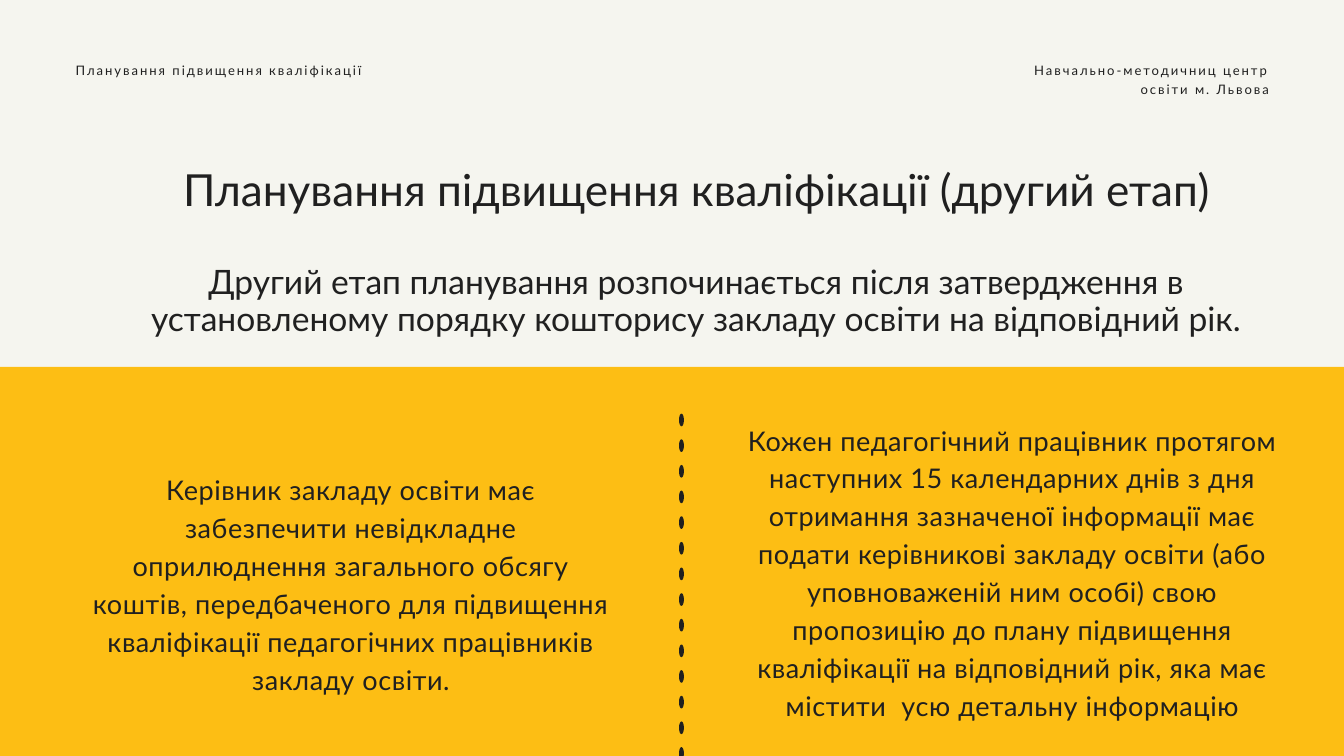
from math import cos, pi, sin

from pptx import Presentation
from pptx.dml.color import RGBColor
from pptx.enum.shapes import MSO_SHAPE as Shape
from pptx.enum.text import MSO_ANCHOR as Anchor, MSO_AUTO_SIZE as AutoSize, PP_ALIGN as Align
from pptx.util import Pt

EMU_PER_PX = 9525
WIDTH, HEIGHT = 1920, 1080
COLORS = {"paper": "F5F5EF", "yellow": "FDBE14", "ink": "202020"}


def px(length):
    return round(length * EMU_PER_PX)


def color(name):
    return RGBColor.from_string(COLORS[name])


class SlideBuilder:
    font = "Lato"

    def __init__(self, page):
        self.page = page
        page.background.fill.solid()
        page.background.fill.fore_color.rgb = color("paper")

    def paint(self, shape, fill):
        shape.shadow.inherit = False
        shape.fill.solid()
        shape.fill.fore_color.rgb = color(fill)
        shape.line.fill.background()

    def band(self, left, top, width, height, fill):
        box = self.page.shapes.add_shape(Shape.RECTANGLE, px(left), px(top), px(width), px(height))
        self.paint(box, fill)

    def dotted_line(self, left, top, width, height, step, count, fill):
        """Draw a column of oval dots as one outline."""
        corners = 24
        angles = [2 * pi * corner / corners for corner in range(corners)]
        builder = None
        for dot in range(count):
            center_x, center_y = left + width / 2, top + dot * step + height / 2
            points = [(px(center_x + width / 2 * cos(angle)), px(center_y + height / 2 * sin(angle)))
                      for angle in angles]
            if builder is None:
                builder = self.page.shapes.build_freeform(*points[0])
            else:
                builder.move_to(*points[0])
            builder.add_line_segments(points[1:], close=True)
        self.paint(builder.convert_to_shape(), fill)

    def format_text(self, box, text, size, leading, align, tracking):
        frame = box.text_frame
        frame.word_wrap = True
        frame.auto_size = AutoSize.NONE
        frame.vertical_anchor = Anchor.TOP
        frame.margin_left = frame.margin_top = frame.margin_right = frame.margin_bottom = 0
        frame.text = text
        para = frame.paragraphs[0]
        para.alignment = align
        para.line_spacing = Pt(leading)
        span = para.runs[0]
        span.font.name = self.font
        span.font.size = Pt(size)
        span.font.color.rgb = color("ink")
        if tracking:
            span._r.get_or_add_rPr().set("spc", str(round(tracking * 100)))

    def title(self, left, top, width, height, text, size, leading):
        box = self.page.shapes.title
        box.left, box.top, box.width, box.height = px(left), px(top), px(width), px(height)
        self.format_text(box, text, size, leading, Align.CENTER, 0)

    def text(self, left, top, width, height, text, size, leading, align=Align.CENTER, tracking=0):
        box = self.page.shapes.add_textbox(px(left), px(top), px(width), px(height))
        self.format_text(box, text, size, leading, align, tracking)


def main():
    deck = Presentation()
    deck.slide_width, deck.slide_height = px(WIDTH), px(HEIGHT)
    slide = SlideBuilder(deck.slides.add_slide(deck.slide_layouts[5]))

    slide.band(0, 524, WIDTH, HEIGHT - 524, "yellow")
    slide.dotted_line(970, 591, 7, 18, 36.64, 14, "ink")

    slide.title(213, 238, 1563, 69, "Планування підвищення кваліфікації (другий етап)", 47.3, 52)
    slide.text(213, 377, 1563, 106,
               "Другий етап планування розпочинається після затвердження в установленому порядку "
               "кошторису закладу освіти на відповідний рік.", 36, 39.6)

    header = {"size": 14, "leading": 19.6, "tracking": 2.1}
    slide.text(108, 86, 443, 25, "Планування підвищення кваліфікації", align=Align.LEFT, **header)
    slide.text(1471, 86, 342, 51, "Навчально-методичниц центр освіти м. Львова",
               align=Align.RIGHT, **header)

    column = {"size": 29, "leading": 40.6, "tracking": 0.6}
    slide.text(122, 669, 759, 268,
               "Керівник закладу освіти має забезпечити невідкладне оприлюднення загального обсягу "
               "коштів, передбаченого для підвищення кваліфікації педагогічних працівників "
               "закладу освіти.", **column)
    slide.text(1067, 598, 759, 429,
               "Кожен педагогічний працівник протягом наступних 15 календарних днів з дня отримання "
               "зазначеної інформації має подати керівникові закладу освіти (або уповноваженій ним "
               "особі) свою пропозицію до плану підвищення кваліфікації на відповідний рік, яка має "
               "містити  усю детальну інформацію", **column)

    deck.save("out.pptx")


if __name__ == "__main__":
    main()
